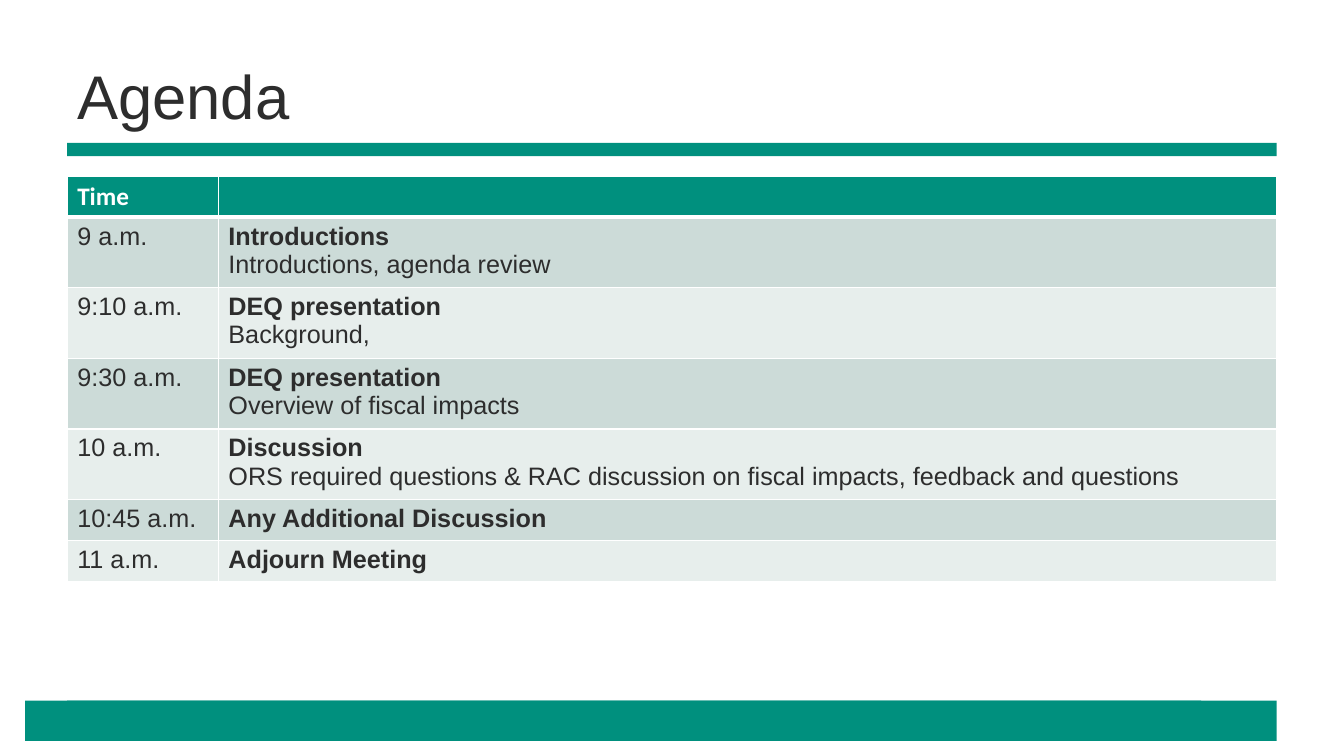
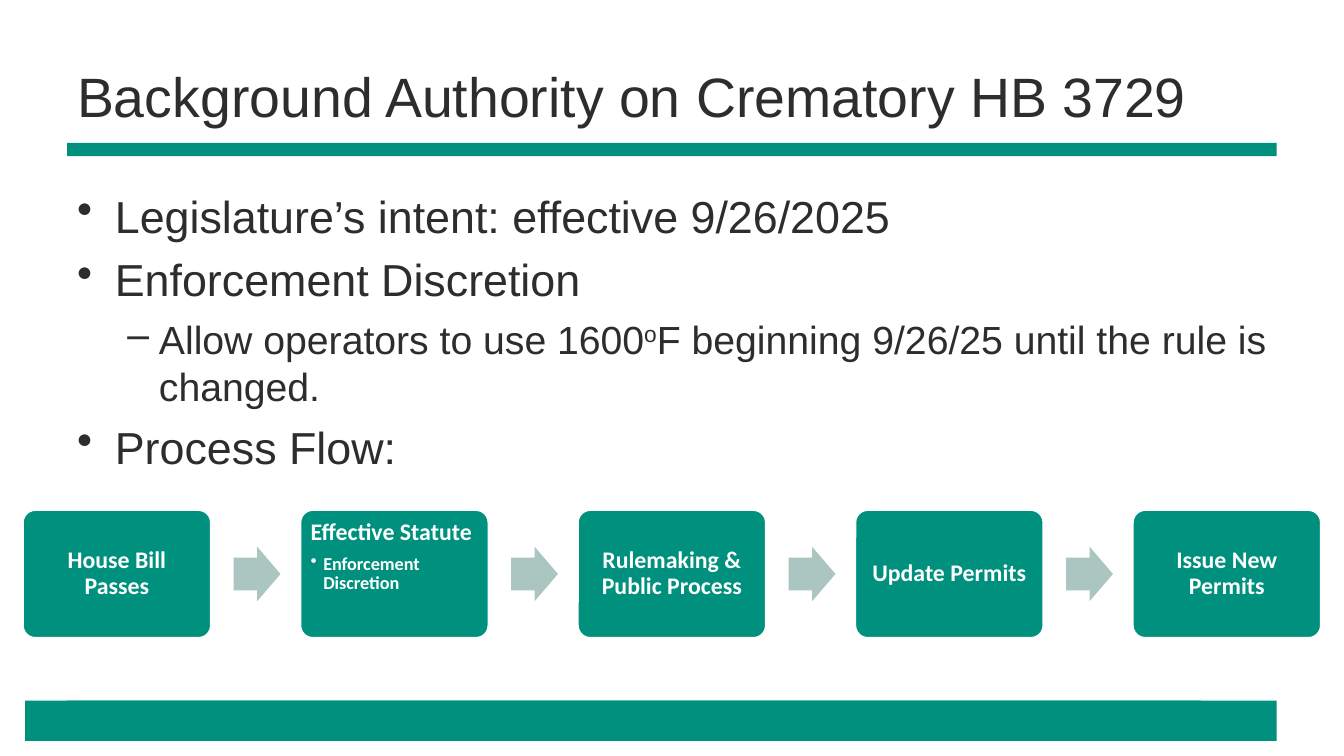
from dataclasses import dataclass

from lxml import etree
from pptx import Presentation
from pptx.dml.color import RGBColor
from pptx.enum.shapes import MSO_SHAPE
from pptx.enum.text import MSO_ANCHOR, PP_ALIGN
from pptx.oxml.ns import qn
from pptx.util import Pt

RECT = MSO_SHAPE.RECTANGLE
ROUND = MSO_SHAPE.ROUNDED_RECTANGLE
ARROW = MSO_SHAPE.RIGHT_ARROW
TOP, MIDDLE = MSO_ANCHOR.TOP, MSO_ANCHOR.MIDDLE
LEFT, CENTER = PP_ALIGN.LEFT, PP_ALIGN.CENTER


@dataclass(frozen=True)
class Theme:
    teal: str = "00907E"
    sage: str = "ABC6C0"
    ink: str = "2D2D2D"
    white: str = "FFFFFF"
    rows: tuple = ("CCDBD8", "E7EEEC")
    main: str = "Arial"
    alt: str = "Calibri"
    title: float = 44
    body: float = 32
    sub: float = 28
    cell: float = 18
    card: float = 17
    note: float = 13


THEME = Theme()
EDGE, WIDE = 48, 864  # left margin and width of the content


def put(para, text, size=THEME.cell, font=THEME.main, color=THEME.ink,
        bold=False, align=LEFT, before=0, after=0, line=None,
        bullet=None, left=0, hang=0):
    """Write text into a paragraph; parts between ^ marks are raised."""
    para.alignment = align
    para.space_before, para.space_after = Pt(before), Pt(after)
    if line:
        para.line_spacing = line
    if bullet:
        props = para._p.get_or_add_pPr()
        props.set("marL", str(Pt(left)))
        props.set("indent", str(-Pt(hang)))
        etree.SubElement(props, qn("a:buChar")).set("char", bullet)
    for i, part in enumerate(text.split("^")):
        if not part:
            continue
        run = para.add_run()
        run.text = part
        run.font.name, run.font.size, run.font.bold = font, Pt(size), bold
        run.font.color.rgb = RGBColor.from_string(color)
        if i % 2:
            run._r.get_or_add_rPr().set("baseline", "30000")


def fill_frame(frame, items):
    """Write one paragraph for each (text, format) pair."""
    for i, (text, form) in enumerate(items):
        put(frame.add_paragraph() if i else frame.paragraphs[0], text, **form)


def add_edge(cell, side, width, color):
    edge = etree.SubElement(cell._tc.get_or_add_tcPr(), qn("a:ln" + side))
    edge.set("w", str(Pt(width)))
    solid = etree.SubElement(edge, qn("a:solidFill"))
    etree.SubElement(solid, qn("a:srgbClr")).set("val", color)


class Deck:
    def __init__(self, theme):
        self.theme = theme
        self.show = Presentation()
        self.show.slide_width, self.show.slide_height = Pt(960), Pt(540)
        self.slide = None

    def page(self, title, size):
        """Start a slide with the shared bands and title."""
        self.slide = self.show.slides.add_slide(self.show.slide_layouts[6])
        for box in ((18, 500.4, 894, 28.8), (EDGE, 102, WIDE, 9.5),
                    (EDGE, 500.4, 810, 28.8)):
            self.shape(RECT, box, self.theme.teal)
        self.text((EDGE, 24, WIDE, 88), [(title, dict(size=size))], MIDDLE)

    def shape(self, kind, box, color, line=None, adjust=()):
        item = self.slide.shapes.add_shape(kind, *map(Pt, box))
        item.shadow.inherit = False
        item.fill.solid()
        item.fill.fore_color.rgb = RGBColor.from_string(color)
        if line:
            item.line.color.rgb = RGBColor.from_string(line)
            item.line.width = Pt(2)
        else:
            item.line.fill.background()
        for i, value in enumerate(adjust):
            item.adjustments[i] = value
        return item

    def text(self, box, items, anchor=TOP):
        frame = self.slide.shapes.add_textbox(*map(Pt, box)).text_frame
        frame.word_wrap = True
        frame.vertical_anchor = anchor
        fill_frame(frame, items)

    def card(self, box, items, anchor):
        item = self.shape(ROUND, box, self.theme.teal, self.theme.white, [0.1])
        frame = item.text_frame
        frame.word_wrap = True
        frame.vertical_anchor = anchor
        frame.margin_left = frame.margin_right = Pt(5)
        frame.margin_top = frame.margin_bottom = Pt(5)
        fill_frame(frame, items)

    def table(self, left, top, widths, rows):
        """Each row is a pair of cells; a cell is a list of paragraphs."""
        highs = [29.2 if len(row[1]) < 2 else 47.5 for row in rows]
        grid = self.slide.shapes.add_table(
            len(rows), len(widths), Pt(left), Pt(top),
            Pt(sum(widths)), Pt(sum(highs))).table
        for col, width in zip(grid.columns, widths):
            col.width = Pt(width)
        for r, row in enumerate(rows):
            grid.rows[r].height = Pt(highs[r])
            tint = self.theme.rows[(r - 1) % 2] if r else self.theme.teal
            edges = dict(L=1, R=1, T=3 if r == 1 else 1, B=1 if r else 3)
            for c, items in enumerate(row):
                cell = grid.cell(r, c)
                for side, width in edges.items():
                    add_edge(cell, side, width, self.theme.white)
                cell.fill.solid()
                cell.fill.fore_color.rgb = RGBColor.from_string(tint)
                fill_frame(cell.text_frame, items)


def agenda(deck):
    deck.page("Agenda", THEME.title)
    head = dict(font=THEME.alt, color=THEME.white, bold=True)
    plan = [
        ("9 a.m.", "Introductions", "Introductions, agenda review"),
        ("9:10 a.m.", "DEQ presentation", "Background,"),
        ("9:30 a.m.", "DEQ presentation", "Overview of fiscal impacts"),
        ("10 a.m.", "Discussion", "ORS required questions & RAC discussion "
         "on fiscal impacts, feedback and questions"),
        ("10:45 a.m.", "Any Additional Discussion"),
        ("11 a.m.", "Adjourn Meeting"),
    ]
    rows = [([("Time", head)], [("", head)])]
    for time, topic, *more in plan:
        lines = [(topic, dict(bold=True))] + [(text, {}) for text in more]
        rows.append(([(time, {})], lines))
    deck.table(EDGE, 126, (108, 756), rows)


def process(deck):
    deck.page("Background Authority on Crematory HB 3729", 39.6)

    # Bullets
    first = dict(size=THEME.body, bullet="•", left=27, hang=27)
    main = dict(first, before=7)
    sub = dict(size=THEME.sub, bullet="–", left=58.5, hang=22.5, before=7)
    deck.text((EDGE, 131, WIDE, 225), [
        ("Legislature’s intent: effective 9/26/2025", first),
        ("Enforcement Discretion", main),
        ("Allow operators to use 1600^o^F beginning 9/26/25 "
         "until the rule is changed.", sub),
        ("Process Flow:", main),
    ])

    # Flow of cards with an arrow in each gap
    start, step, top, width, high = 16, 198.2, 364, 135, 92
    look = dict(font=THEME.alt, color=THEME.white, bold=True, line=0.9)
    lead = dict(look, size=THEME.card)
    note = dict(look, size=THEME.note, bullet="•", left=9, hang=9)
    flow = [
        ("House Bill Passes",),
        ("Effective Statute", "Enforcement Discretion"),
        ("Rulemaking & Public Process",),
        ("Update Permits",),
        ("Issue New Permits",),
    ]
    for i, (name, *more) in enumerate(flow):
        left = start + i * step
        if i:
            deck.shape(ARROW, (left - 47.2, top + 26.5, 33.4, 39),
                       THEME.sage, adjust=[0.6, 0.5])
        form = dict(lead, after=6) if more else dict(lead, align=CENTER)
        items = [(name, form)] + [(text, note) for text in more]
        deck.card((left, top, width, high), items, TOP if more else MIDDLE)


def main():
    deck = Deck(THEME)
    agenda(deck)
    process(deck)
    deck.show.save("out.pptx")


if __name__ == "__main__":
    main()
